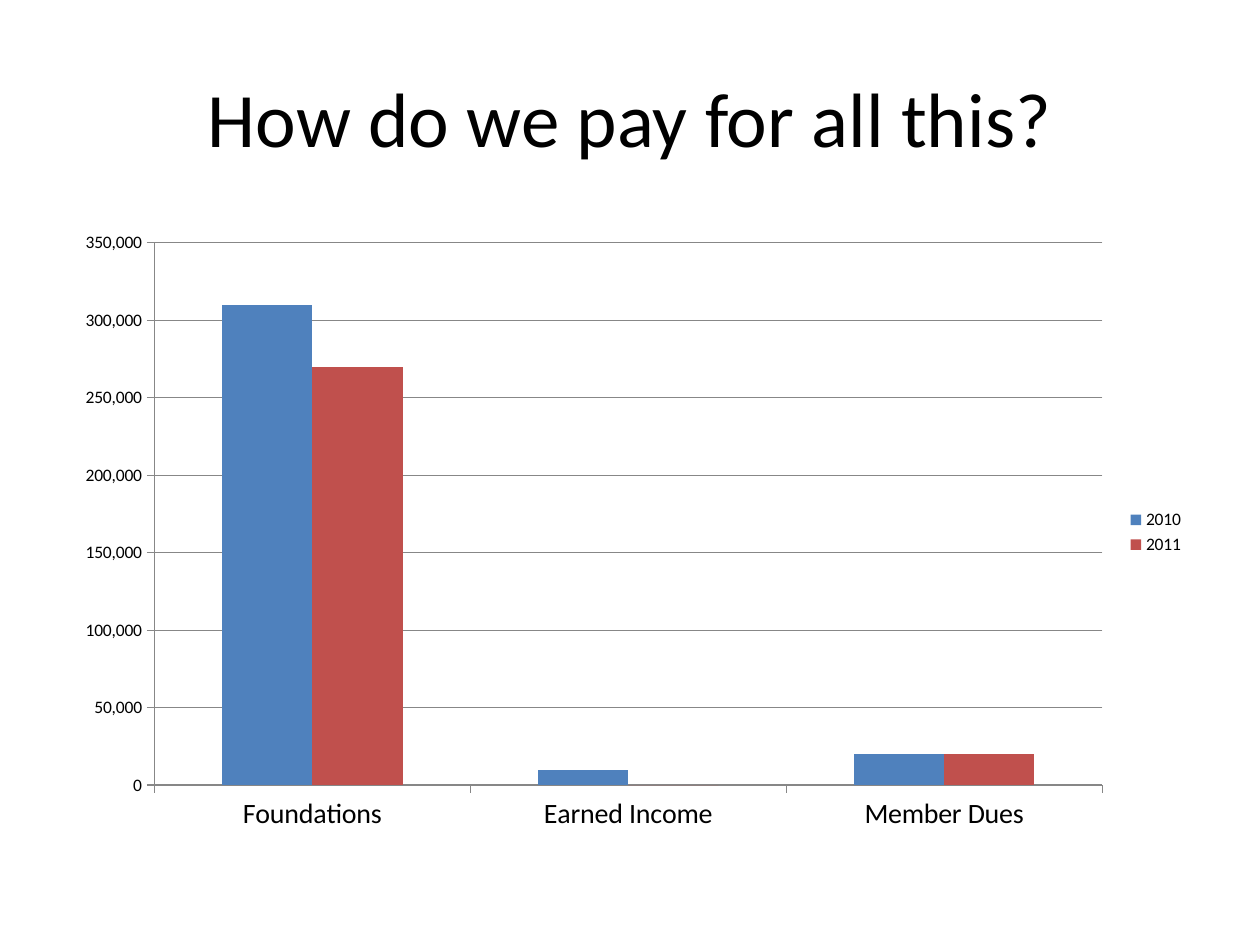
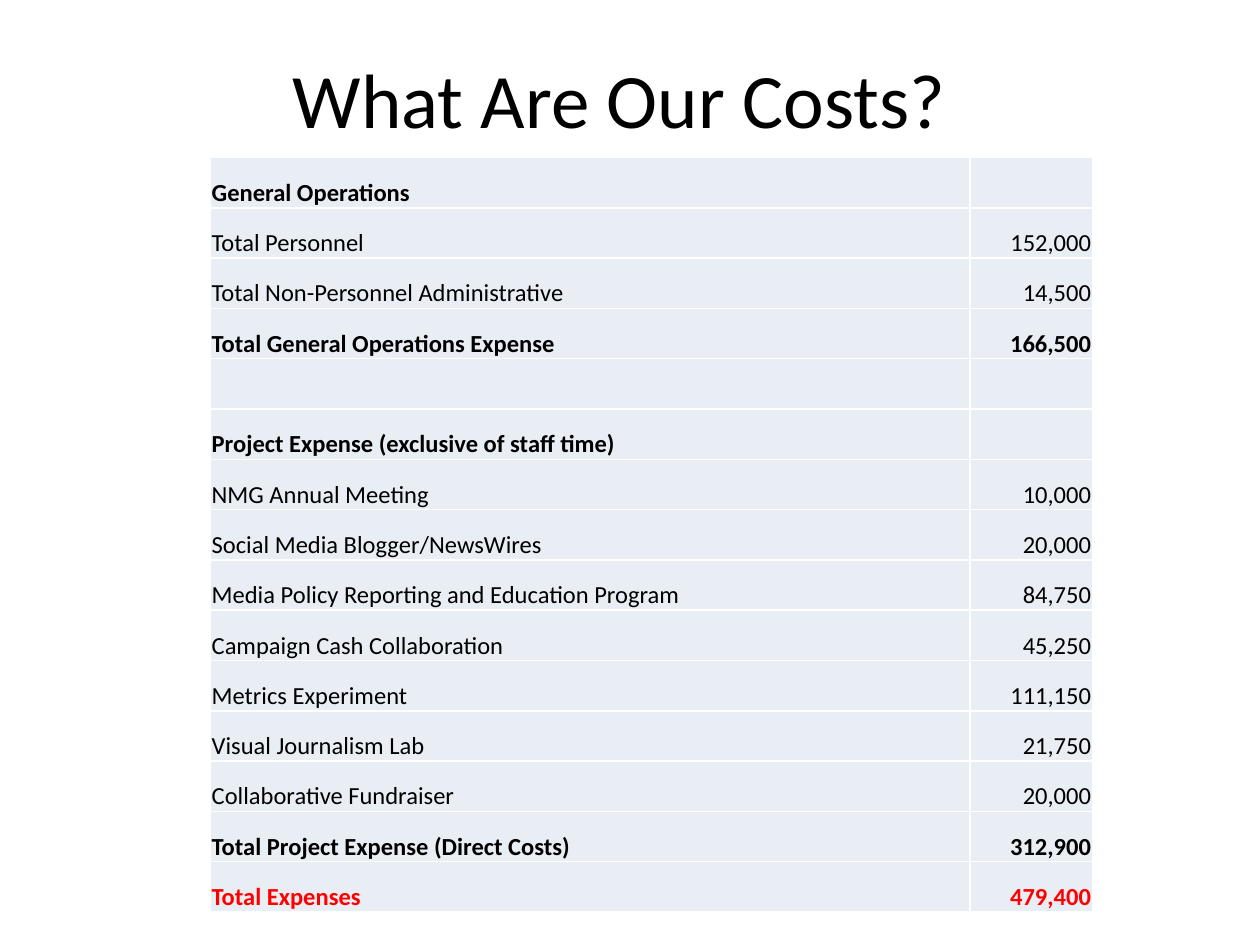
"""Build two slides on income sources and yearly costs."""
from dataclasses import dataclass
from typing import Any

import pptx
import pptx.chart.data
import pptx.dml.color
import pptx.enum.chart
import pptx.enum.text
import pptx.oxml
import pptx.oxml.ns
import pptx.util
from pptx.util import Inches

FONT = "Calibri"
COLORS = {
    "text": "000000",
    "total": "FF0000",
    "cell": "E9EDF4",
    "border": "FFFFFF",
    "axis": "878787",
    "2010": "4F81BD",
    "2011": "C0504D",
}
BOTTOM = pptx.enum.text.MSO_ANCHOR.BOTTOM
MIDDLE = pptx.enum.text.MSO_ANCHOR.MIDDLE
ALIGN = pptx.enum.text.PP_ALIGN
TITLE_FRAME = {"word_wrap": True, "vertical_anchor": MIDDLE}
CELL_FORMAT = {
    "vertical_anchor": BOTTOM,
    "margin_left": Inches(0.01),
    "margin_right": Inches(0.01),
    "margin_top": Inches(0.01),
    "margin_bottom": Inches(0),
}
AXIS_FORMAT = {
    "major_tick_mark": pptx.enum.chart.XL_TICK_MARK.OUTSIDE,
    "minor_tick_mark": pptx.enum.chart.XL_TICK_MARK.NONE,
}
VALUE_SCALE = {
    "minimum_scale": 0,
    "maximum_scale": 350000,
    "major_unit": 50000,
    "has_major_gridlines": True,
}
LEGEND_FORMAT = {
    "position": pptx.enum.chart.XL_LEGEND_POSITION.RIGHT,
    "include_in_layout": False,
}
PLOT_FORMAT = {"gap_width": 150, "overlap": 0, "vary_by_categories": False}
TABLE_HEIGHT = 5.99
COLUMN_WIDTHS = (6.03, 0.97)


@dataclass
class Title:
    text: str
    width: float
    height: float


@dataclass
class Cost:
    label: str = ""
    amount: str = ""
    bold: bool = False
    color: str = "text"


SOURCES = ("Foundations", "Earned Income", "Member Dues")
INCOME = {"2010": (310000, 10000, 20000), "2011": (270000, 0, 20000)}
COSTS = (
    Cost("General Operations", bold=True),
    Cost("Total Personnel", "152,000"),
    Cost("Total Non-Personnel Administrative", "14,500"),
    Cost("Total General Operations Expense", "166,500", bold=True),
    Cost(),
    Cost("Project Expense (exclusive of staff time)", bold=True),
    Cost("NMG Annual Meeting", "10,000"),
    Cost("Social Media Blogger/NewsWires", "20,000"),
    Cost("Media Policy Reporting and Education Program", "84,750"),
    Cost("Campaign Cash Collaboration", "45,250"),
    Cost("Metrics Experiment", "111,150"),
    Cost("Visual Journalism Lab", "21,750"),
    Cost("Collaborative Fundraiser", "20,000"),
    Cost("Total Project Expense (Direct Costs)", "312,900", bold=True),
    Cost("Total Expenses", "479,400", bold=True, color="total"),
)


def apply(target: Any, values: dict) -> None:
    for name, value in values.items():
        setattr(target, name, value)


def rgb(key: str) -> pptx.dml.color.RGBColor:
    return pptx.dml.color.RGBColor.from_string(COLORS[key])


def style_font(font: Any, size: int, color: str = "text", bold: bool = False) -> None:
    apply(font, {"name": FONT, "size": pptx.util.Pt(size), "bold": bold})
    font.color.rgb = rgb(color)


def write(paragraph: Any, text: str, align: Any, size: int, color: str = "text", bold: bool = False) -> None:
    paragraph.alignment = align
    run = paragraph.add_run()
    run.text = text
    style_font(run.font, size, color, bold)


def add_titled_slide(deck: Any, title: Title) -> Any:
    slide = deck.slides.add_slide(deck.slide_layouts[6])
    heading = slide.shapes.add_textbox(Inches(0.5), Inches(0.3), Inches(title.width), Inches(title.height))
    apply(heading.text_frame, TITLE_FRAME)
    write(heading.text_frame.paragraphs[0], title.text, ALIGN.CENTER, 44)
    return slide


def style_line(line: Any) -> None:
    line.color.rgb = rgb("axis")
    line.width = pptx.util.Pt(0.75)


def add_income_chart(slide: Any) -> None:
    income = pptx.chart.data.CategoryChartData(number_format="#,##0")
    income.categories = SOURCES
    for year, amounts in INCOME.items():
        income.add_series(year, amounts)
    chart = slide.shapes.add_chart(
        pptx.enum.chart.XL_CHART_TYPE.COLUMN_CLUSTERED,
        Inches(0.5), Inches(1.75), Inches(9), Inches(4.95), income,
    ).chart
    style_font(chart.font, 10)
    apply(chart, {"has_title": False, "has_legend": True})
    apply(chart.legend, LEGEND_FORMAT)
    apply(chart.plots[0], PLOT_FORMAT)
    for series in chart.plots[0].series:
        series.format.fill.solid()
        series.format.fill.fore_color.rgb = rgb(series.name)
        series.invert_if_negative = False
    for axis, size in ((chart.category_axis, 16), (chart.value_axis, 10)):
        apply(axis, AXIS_FORMAT)
        style_font(axis.tick_labels.font, size)
        style_line(axis.format.line)
    apply(chart.value_axis, VALUE_SCALE)
    style_line(chart.value_axis.major_gridlines.format.line)


def add_borders(cell: Any) -> None:
    properties = cell._tc.get_or_add_tcPr()
    for position, side in enumerate(("lnL", "lnR", "lnT", "lnB")):
        border = pptx.oxml.parse_xml(
            f'<a:{side} {pptx.oxml.ns.nsdecls("a")} w="12700"><a:solidFill>'
            f'<a:srgbClr val="{COLORS["border"]}"/></a:solidFill></a:{side}>'
        )
        properties.insert(position, border)


def add_cost_table(slide: Any) -> None:
    table = slide.shapes.add_table(
        len(COSTS), len(COLUMN_WIDTHS), Inches(1.67), Inches(1.25),
        Inches(sum(COLUMN_WIDTHS)), Inches(TABLE_HEIGHT),
    ).table
    apply(table, {"first_row": False, "horz_banding": False})
    for column, width in zip(table.columns, COLUMN_WIDTHS):
        column.width = Inches(width)
    for row, cost in zip(table.rows, COSTS):
        row.height = Inches(TABLE_HEIGHT / len(COSTS))
        entries = ((cost.label, ALIGN.LEFT), (cost.amount, ALIGN.RIGHT))
        for cell, (text, align) in zip(row.cells, entries):
            apply(cell, CELL_FORMAT)
            cell.fill.solid()
            cell.fill.fore_color.rgb = rgb("cell")
            add_borders(cell)
            if text:
                write(cell.text_frame.paragraphs[0], text, align, 14, cost.color, cost.bold)


def main() -> None:
    deck = pptx.Presentation()
    apply(deck, {"slide_width": Inches(10), "slide_height": Inches(7.5)})
    add_income_chart(add_titled_slide(deck, Title("How do we pay for all this?", 9, 1.25)))
    add_cost_table(add_titled_slide(deck, Title("What Are Our Costs?", 8.83, 0.95)))
    deck.save("out.pptx")


if __name__ == "__main__":
    main()
